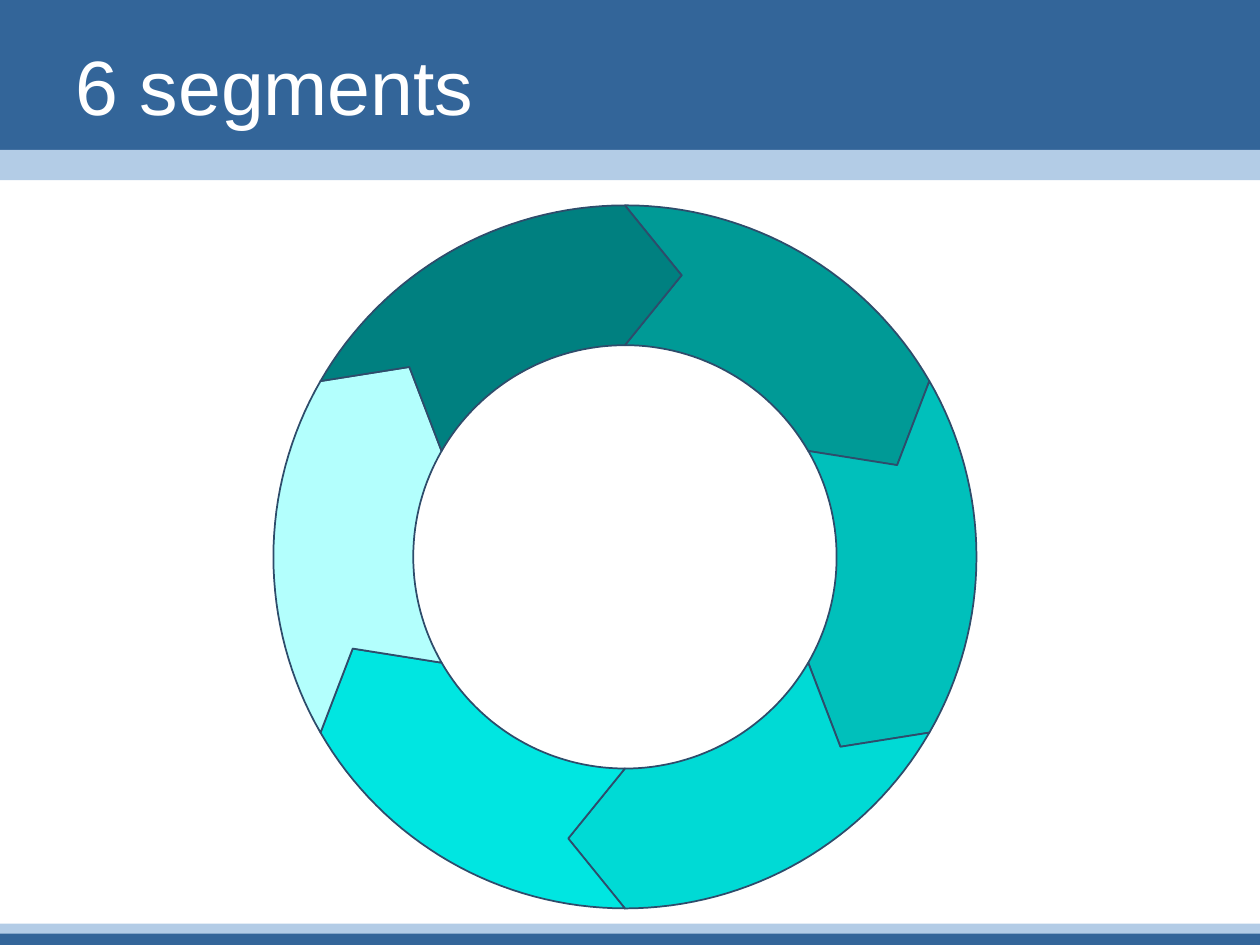
from math import cos, radians, sin

from pptx import Presentation
from pptx.dml.color import RGBColor
from pptx.enum.shapes import MSO_SHAPE
from pptx.enum.text import MSO_ANCHOR, PP_ALIGN
from pptx.util import Inches, Pt

COLORS = {
    "dark_band": "336599",
    "light_band": "B3CCE6",
    "outline": "2E4C6B",
    "title": "FFFFFF",
}
# Clockwise from the top of the ring
SEGMENT_FILLS = ["009A96", "00C0BB", "00DAD5", "00E6E1", "B3FFFD", "008080"]
# Top, height and colour of each full-width band, back to front
BANDS = [
    (0, 1.31, "dark_band"),
    (7.37, 0.13, "dark_band"),
    (1.19, 0.24, "light_band"),
    (7.33, 0.08, "light_band"),
]
CENTER_X, CENTER_Y = 4.96, 4.42
OUTER_RADIUS, INNER_RADIUS = 2.79, 1.68
TIP_LENGTH = 0.45
ARC_STEPS = 32


def rgb(value):
    return RGBColor.from_string(value)


def ring_point(radius, angle, forward=0):
    """Point at a clockwise angle from the top, moved forward along the tangent."""
    turn = radians(angle)
    x = CENTER_X + radius * sin(turn) + forward * cos(turn)
    y = CENTER_Y - radius * cos(turn) + forward * sin(turn)
    return Inches(x), Inches(y)


def arc(radius, start, end):
    step = (end - start) / ARC_STEPS
    return [ring_point(radius, start + step * i) for i in range(ARC_STEPS + 1)]


def add_band(slide, top, height, color):
    band = slide.shapes.add_shape(
        MSO_SHAPE.RECTANGLE, 0, Inches(top), Inches(10), Inches(height))
    band.shadow.inherit = False
    band.fill.solid()
    band.fill.fore_color.rgb = rgb(COLORS[color])
    band.line.fill.background()


def add_segment(slide, start, end, fill):
    """Ring segment with a notch at its start and an arrow tip at its end."""
    middle = (OUTER_RADIUS + INNER_RADIUS) / 2
    points = [
        *arc(OUTER_RADIUS, end, start),
        ring_point(middle, start, TIP_LENGTH),
        *arc(INNER_RADIUS, start, end),
        ring_point(middle, end, TIP_LENGTH),
    ]
    builder = slide.shapes.build_freeform(*points[0])
    builder.add_line_segments(points[1:], close=True)
    segment = builder.convert_to_shape()
    segment.shadow.inherit = False
    segment.fill.solid()
    segment.fill.fore_color.rgb = rgb(fill)
    segment.line.color.rgb = rgb(COLORS["outline"])
    segment.line.width = Pt(1)


def set_title(slide, text):
    title = slide.shapes.title
    box = {"left": 0.5, "top": 0.28, "width": 9.07, "height": 0.79}
    for name, value in box.items():
        setattr(title, name, Inches(value))
    frame = title.text_frame
    frame.text = text
    frame.vertical_anchor = MSO_ANCHOR.MIDDLE
    paragraph = frame.paragraphs[0]
    paragraph.alignment = PP_ALIGN.LEFT
    font = paragraph.runs[0].font
    for name, value in {"name": "Arial", "size": Pt(44)}.items():
        setattr(font, name, value)
    font.color.rgb = rgb(COLORS["title"])
    # Bring the title in front of the bands
    slide.shapes._spTree.append(title._element)


def main():
    presentation = Presentation()
    presentation.slide_width = Inches(10)
    presentation.slide_height = Inches(7.5)
    slide = presentation.slides.add_slide(presentation.slide_layouts[5])
    for band in BANDS:
        add_band(slide, *band)
    sweep = 360 / len(SEGMENT_FILLS)
    for index, fill in enumerate(SEGMENT_FILLS):
        add_segment(slide, index * sweep, (index + 1) * sweep, fill)
    set_title(slide, "6 segments")
    presentation.save("out.pptx")


if __name__ == "__main__":
    main()
